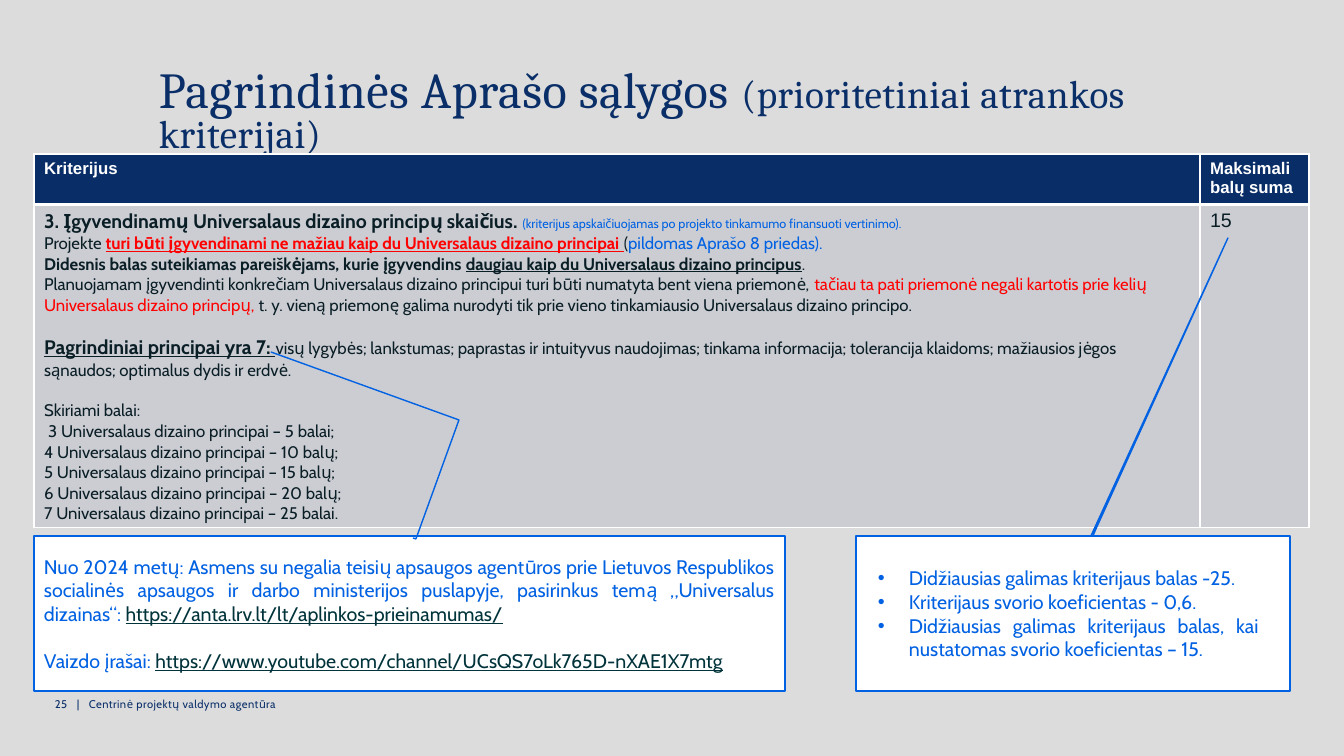
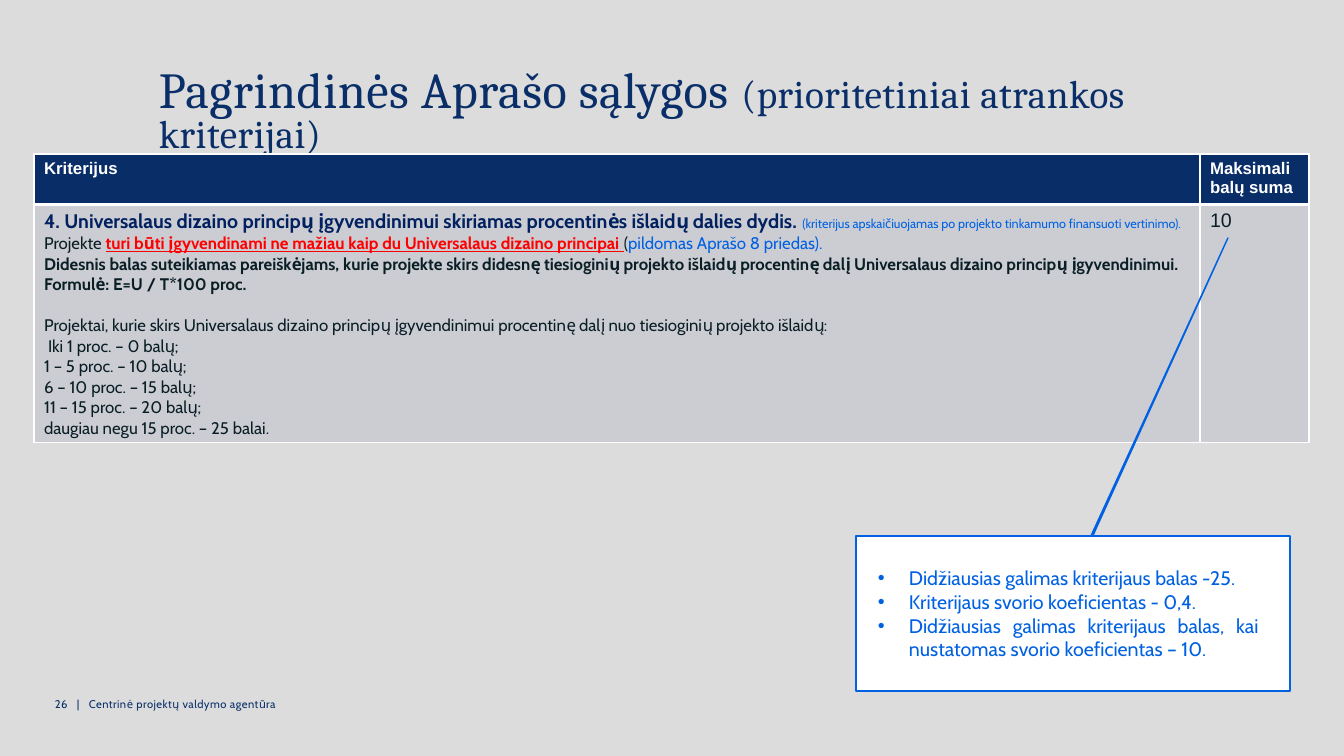
from lxml import etree
from pptx import Presentation
from pptx import util as u
from pptx.dml import color
from pptx.enum import shapes, text
from pptx.oxml import ns

SCALE = 914400 / 100.8
NAVY, HEADER, BLUE, RED = "092E68", "092D67", "0061E2", "FF0000"
INK, LINK, WHITE, GREY, PAGE = "0A1E26", "01333B", "FFFFFF", "CCCDD3", "DCDCDC"
TABLE_BOX = (34, 154, 1275)
SCORE_W, HEADER_H = 109, 48
NOTE_BOX = (34, 536, 751, 155)
SCORE_BOX = (856, 536, 434, 155)
LINE_GAP = 14.6

CABIN = dict(font="Cabin", size=12, color=INK)
BOLD = dict(CABIN, bold=True)
BOLD_LINE = dict(BOLD, underline=True)
HEAD = dict(BOLD, size=14)
SMALL = dict(CABIN, size=9, color=BLUE)
ACCENT = dict(CABIN, color=BLUE)
ALERT = dict(CABIN, color=RED)
MUST = dict(BOLD_LINE, color=RED)
CALLOUT = dict(CABIN, size=14, color=BLUE)
CALLOUT_LINK = dict(CALLOUT, color=LINK, underline=True)
TITLE = dict(font="Cambria", size=36, color=NAVY, spacing=40)
SUBTITLE = dict(TITLE, size=28)
FOOTER = dict(font="Cabin", size=8, color=NAVY, spacing=30)
TABLE_HEAD = dict(font="Arial", size=12, color=WHITE, bold=True)
SCORE = dict(font="Arial", size=14, color=INK)

AFTER_NOTE = ("(kriterijus apskaičiuojamas po projekto tinkamumo finansuoti vertinimo).", SMALL)
MINIMUM = [
    ("Projekte ", CABIN),
    ("turi būti įgyvendinami ne mažiau kaip du Universalaus dizaino principai ", MUST),
    ("(", CABIN),
    ("pildomas Aprašo 8 priedas).", ACCENT),
]


def px(n):
    return u.Emu(round(n * SCALE))


def rgb(value):
    return color.RGBColor.from_string(value)


def add_run(p, content, style):
    r = p.add_run()
    r.text = content
    f = r.font
    f.name, f.size = style["font"], u.Pt(style["size"])
    f.bold, f.underline = style.get("bold", False), style.get("underline", False)
    f.color.rgb = rgb(style["color"])
    if "spacing" in style:
        r._r.get_or_add_rPr().set("spc", str(style["spacing"]))


def add_paragraphs(tf, paragraphs, align=None, gaps=None, indents=None):
    for i, runs in enumerate(paragraphs):
        p = tf.paragraphs[0] if i == 0 else tf.add_paragraph()
        p.alignment = align
        if i in (gaps or {}):
            p.space_before = u.Pt(gaps[i])
        if i in (indents or {}):
            p._p.get_or_add_pPr().set("marL", str(px(indents[i])))
        for content, style in runs:
            add_run(p, content, style)


def add_textbox(s, x, y, w, h, runs):
    tf = s.shapes.add_textbox(px(x), px(y), px(w), px(h)).text_frame
    tf.word_wrap = True
    add_paragraphs(tf, [runs])
    return tf.paragraphs[0]


def add_title(s):
    p = add_textbox(s, 149, 65, 1140, 120, [
        ("Pagrindinės Aprašo sąlygos ", TITLE),
        ("(prioritetiniai atrankos kriterijai)", SUBTITLE),
    ])
    p.line_spacing, p.space_after = 0.8, u.Pt(12)


def add_footer(s, number):
    p = add_textbox(s, 45, 692, 323, 40,
                    [(f"{number}\t|\tCentrinė projektų valdymo agentūra", FOOTER)])
    tabs = etree.SubElement(p._p.get_or_add_pPr(), ns.qn("a:tabLst"))
    for stop in (22, 34):
        etree.SubElement(tabs, ns.qn("a:tab"), pos=str(px(stop)), algn="l")


def style_cell(cell, fill, top, bottom):
    tc_pr = cell._tc.get_or_add_tcPr()
    for side, width in (("L", 1), ("R", 1), ("T", top), ("B", bottom)):
        ln = etree.SubElement(tc_pr, ns.qn(f"a:ln{side}"), w=str(u.Pt(width)))
        solid = etree.SubElement(ln, ns.qn("a:solidFill"))
        etree.SubElement(solid, ns.qn("a:srgbClr"), val=WHITE)
    cell.fill.solid()
    cell.fill.fore_color.rgb = rgb(fill)


def add_criteria_table(s, x, y, w, body_h, criteria, score, gaps, indents):
    table = s.shapes.add_table(2, 2, px(x), px(y), px(w), px(HEADER_H + body_h)).table
    table.first_row = table.horz_banding = False
    for col, width in zip(table.columns, (w - SCORE_W, SCORE_W)):
        col.width = px(width)
    for row, height in zip(table.rows, (HEADER_H, body_h)):
        row.height = px(height)
    for col, label in enumerate(("Kriterijus", "Maksimali balų suma")):
        style_cell(table.cell(0, col), HEADER, 1, 3)
        style_cell(table.cell(1, col), GREY, 3, 1)
        add_paragraphs(table.cell(0, col).text_frame, [[(label, TABLE_HEAD)]])
    add_paragraphs(table.cell(1, 0).text_frame, criteria, gaps=gaps, indents=indents)
    add_paragraphs(table.cell(1, 1).text_frame, [[(score, SCORE)]])


def add_callout(s, box, leader, paragraphs, gaps=None):
    x, y, w, h = box
    sp = s.shapes.add_shape(shapes.MSO_SHAPE.LINE_CALLOUT_3, px(x), px(y), px(w), px(h))
    sp.shadow.inherit = False
    for i, (dx, dy) in enumerate(leader):
        sp.adjustments[2 * i] = dy / h
        sp.adjustments[2 * i + 1] = dx / w
    sp.fill.solid()
    sp.fill.fore_color.rgb = rgb(WHITE)
    sp.line.color.rgb = rgb(BLUE)
    sp.line.width = u.Pt(1)
    tf = sp.text_frame
    tf.word_wrap = True
    tf.vertical_anchor = text.MSO_ANCHOR.MIDDLE
    add_paragraphs(tf, paragraphs, text.PP_ALIGN.JUSTIFY, gaps)
    return tf


def add_score_callout(s, weight, score):
    lines = (
        "Didžiausias galimas kriterijaus balas -25.",
        f"Kriterijaus svorio koeficientas - {weight}.",
        f"Didžiausias galimas kriterijaus balas, kai nustatomas svorio koeficientas – {score}.",
    )
    tf = add_callout(s, SCORE_BOX, [(237, 0), (240, -7), (372, -298), (235, 0)],
                     [[(line, CALLOUT)] for line in lines])
    tf.margin_right = px(31)
    for p in tf.paragraphs:
        p_pr = p._p.get_or_add_pPr()
        p_pr.set("marL", str(px(43)))
        p_pr.set("indent", str(-px(31)))
        etree.SubElement(p_pr, ns.qn("a:buFont"), typeface="Arial")
        etree.SubElement(p_pr, ns.qn("a:buChar"), char="•")


def add_sources_callout(s):
    add_callout(s, NOTE_BOX, [(379, 2), (382, 3), (425, -116), (237, -184)], [
        [("Nuo 2024 metų: Asmens su negalia teisių apsaugos agentūros prie Lietuvos "
          "Respublikos socialinės apsaugos ir darbo ministerijos puslapyje, pasirinkus "
          "temą „Universalus dizainas“: ", CALLOUT),
         ("https://anta.lrv.lt/lt/aplinkos-prieinamumas/", CALLOUT_LINK)],
        [("Vaizdo įrašai: ", CALLOUT),
         ("https://www.youtube.com/channel/UCsQS7oLk765D-nXAE1X7mtg", CALLOUT_LINK)],
    ], gaps={1: 17})


def add_criterion_slide(prs, number, body_h, criteria, gaps, indents, weight, score):
    s = prs.slides.add_slide(prs.slide_layouts[6])
    s.background.fill.solid()
    s.background.fill.fore_color.rgb = rgb(PAGE)
    add_title(s)
    add_footer(s, number)
    add_criteria_table(s, *TABLE_BOX, body_h, criteria, score, gaps, indents)
    add_score_callout(s, weight, score)
    return s


def principles_slide(prs):
    points = [(3, "5 balai;"), (4, "10 balų;"), (5, "15 balų;"), (6, "20 balų;"), (7, "25 balai.")]
    criteria = [
        [("3. Įgyvendinamų Universalaus dizaino principų skaičius. ", HEAD), AFTER_NOTE],
        MINIMUM,
        [("Didesnis balas suteikiamas pareiškėjams, kurie įgyvendins ", BOLD),
         ("daugiau kaip du Universalaus dizaino principus", BOLD_LINE),
         (".", CABIN)],
        [("Planuojamam įgyvendinti konkrečiam Universalaus dizaino principui turi būti "
          "numatyta bent viena priemonė, ", CABIN),
         ("tačiau ta pati priemonė negali kartotis prie kelių Universalaus dizaino principų,",
          ALERT),
         (" t. y. vieną priemonę galima nurodyti tik prie vieno tinkamiausio Universalaus "
          "dizaino principo.", CABIN)],
        [("Pagrindiniai principai yra 7: ", dict(HEAD, underline=True)),
         ("visų lygybės; lankstumas; paprastas ir intuityvus naudojimas; tinkama informacija; "
          "tolerancija klaidoms; mažiausios jėgos sąnaudos; optimalus dydis ir erdvė.", CABIN)],
        [("Skiriami balai:", CABIN)],
    ] + [[(f"{count} Universalaus dizaino principai – {award}", CABIN)] for count, award in points]
    s = add_criterion_slide(prs, 25, 323, criteria, {4: LINE_GAP, 5: LINE_GAP}, {6: 4},
                            "0,6", "15")
    add_sources_callout(s)


def spending_slide(prs):
    points = ("Iki 1 proc. – 0 balų;", "1 – 5 proc. – 10 balų;", "6 – 10 proc. – 15 balų;",
              "11 – 15 proc. – 20 balų;", "daugiau negu 15 proc. – 25 balai.")
    criteria = [
        [("4. Universalaus dizaino principų įgyvendinimui skiriamas procentinės išlaidų "
          "dalies dydis. ", dict(HEAD, color="002060")), AFTER_NOTE],
        MINIMUM,
        [("Didesnis balas suteikiamas pareiškėjams, kurie projekte skirs didesnę tiesioginių "
          "projekto išlaidų procentinę dalį Universalaus dizaino principų įgyvendinimui. "
          "Formulė: E=U / T*100 proc.", BOLD)],
        [("Projektai, kurie skirs Universalaus dizaino principų įgyvendinimui procentinę dalį "
          "nuo tiesioginių projekto išlaidų:", CABIN)],
    ] + [[(point, CABIN)] for point in points]
    add_criterion_slide(prs, 26, 238, criteria, {3: LINE_GAP}, {4: 4}, "0,4", "10")


def main():
    prs = Presentation()
    prs.slide_width, prs.slide_height = px(1344), px(756)
    principles_slide(prs)
    spending_slide(prs)
    prs.save("out.pptx")


if __name__ == "__main__":
    main()
